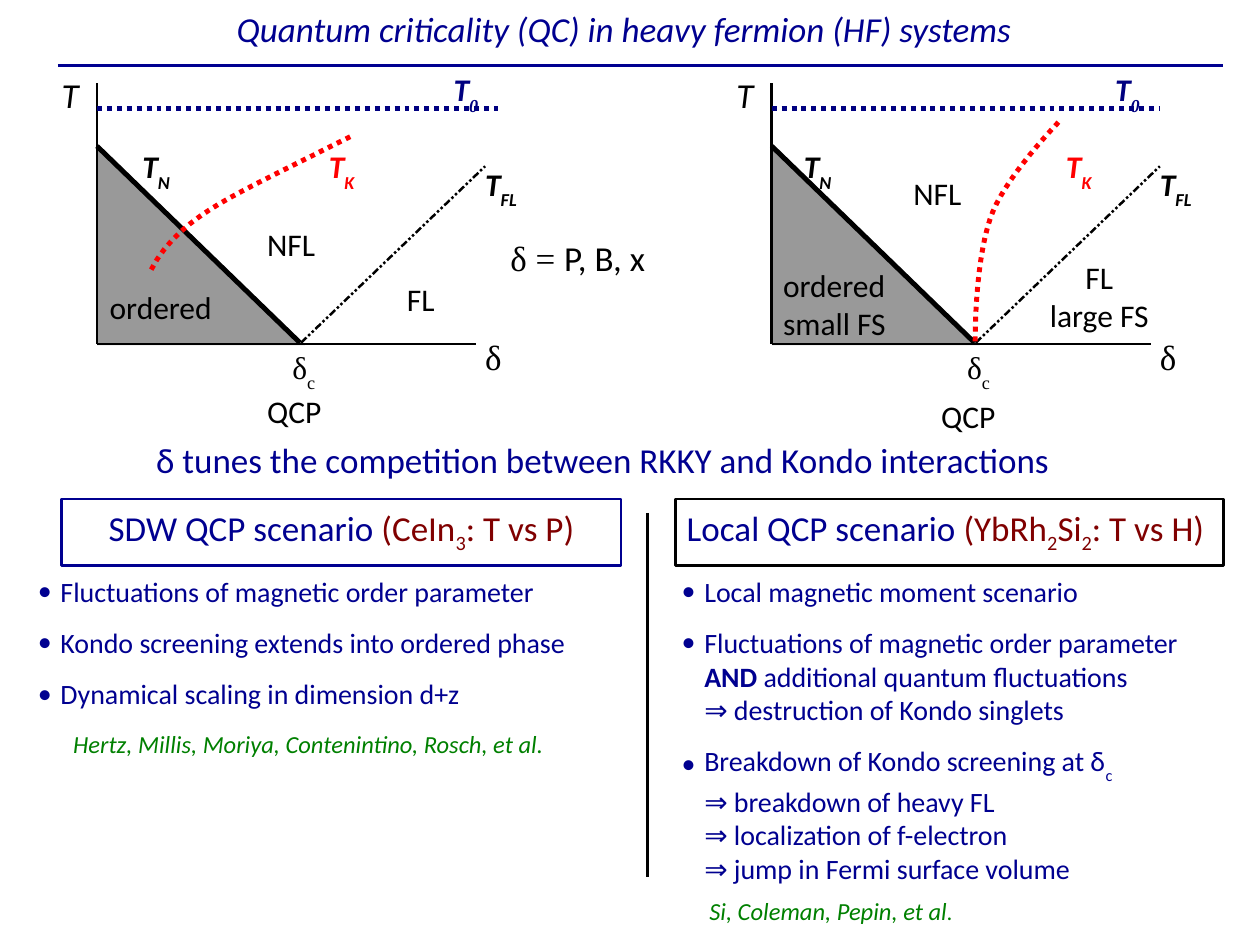
from lxml import etree
from pptx import Presentation
from pptx.dml.color import RGBColor
from pptx.enum.shapes import MSO_CONNECTOR, MSO_SHAPE
from pptx.enum.text import MSO_ANCHOR, PP_ALIGN
from pptx.oxml.ns import qn
from pptx.util import Inches, Pt

LEFT, CENTER = PP_ALIGN.LEFT, PP_ALIGN.CENTER
TOP = MSO_ANCHOR.TOP
STRAIGHT = MSO_CONNECTOR.STRAIGHT
TRIANGLE = MSO_SHAPE.RIGHT_TRIANGLE

BLACK = RGBColor(0x00, 0x00, 0x00)
WHITE = RGBColor(0xFF, 0xFF, 0xFF)
GRAY = RGBColor(0x99, 0x99, 0x99)
RED = RGBColor(0xFF, 0x00, 0x00)
NAVY = RGBColor(0x00, 0x00, 0x80)
BLUE = RGBColor(0x00, 0x00, 0x90)
MAROON = RGBColor(0x80, 0x00, 0x00)
GREEN = RGBColor(0x00, 0x80, 0x00)

SANS, SERIF = "Calibri", "Times New Roman"
WIDTH, HEIGHT = Inches(10), Inches(7.5)
COLUMN, ROW = WIDTH / 100, HEIGHT / 75
DOTS, DASH_DOTS = "sysDot", "sysDashDotDot"
SUB = {"base": -33}
FORMULA_SUB = {"base": -25, "color": MAROON}


def place(col, row):
    return round(col * COLUMN), round(row * ROW)


def style_line(shape, color, weight, dash=None):
    shape.line.color.rgb = color
    shape.line.width = Pt(weight)
    if dash:
        outline = shape._element.spPr.find(qn("a:ln"))
        etree.SubElement(outline, qn("a:prstDash"), val=dash)


def add_line(slide, start, end, color=BLACK, weight=1.42, dash=None):
    line = slide.shapes.add_connector(STRAIGHT, *place(*start), *place(*end))
    style_line(line, color, weight, dash)
    etree.SubElement(line._element.spPr, qn("a:effectLst"))


def add_run(paragraph, text, size, color, font=SANS, bold=False, italic=False, base=0):
    for index, part in enumerate(text.split("\n")):
        if index:
            paragraph.add_line_break()
        if not part:
            continue
        run = paragraph.add_run()
        run.text = part
        run.font.name, run.font.size = font, Pt(size)
        run.font.bold, run.font.italic = bold, italic
        run.font.color.rgb = color
        if base:
            run._r.get_or_add_rPr().set("baseline", str(base * 1000))


def add_text(slide, box, *paragraphs, size=18, color=BLACK, align=LEFT, wrap=False,
             bullet=None, fill=None, border=None, **font):
    holder = slide.shapes.add_textbox(*place(*box[:2]), *place(*box[2:]))
    if fill is not None:
        holder.fill.solid()
        holder.fill.fore_color.rgb = fill
    if border is not None:
        style_line(holder, border, 1.5)
    frame = holder.text_frame
    frame.word_wrap, frame.vertical_anchor = wrap, TOP
    frame.margin_left = frame.margin_right = Inches(0.09)
    frame.margin_top, frame.margin_bottom = Inches(0.06), Inches(0.04)
    for index, runs in enumerate(paragraphs):
        paragraph = frame.add_paragraph() if index else frame.paragraphs[0]
        paragraph.alignment = align
        if bullet:
            paragraph.space_after = Pt(10)
            properties = paragraph._p.get_or_add_pPr()
            properties.set("marL", str(Inches(0.18)))
            properties.set("indent", str(-Inches(0.18)))
            etree.SubElement(properties, qn("a:buFont"), typeface=SANS)
            etree.SubElement(properties, qn("a:buChar"), char=bullet)
            paragraph.font.size = Pt(size)
        for run in [runs] if isinstance(runs, str) else runs:
            text, changes = (run, {}) if isinstance(run, str) else run
            add_run(paragraph, text, **{"size": size, "color": color, **font, **changes})


def add_curve(slide, points, color, steps=12):
    path_points = [points[0]]
    for first in range(0, len(points) - 1, 3):
        a, b, c, d = points[first:first + 4]
        for step in range(1, steps + 1):
            t = step / steps
            u = 1 - t
            path_points.append(tuple(
                u**3 * p + 3 * u * u * t * q + 3 * u * t * t * r + t**3 * s
                for p, q, r, s in zip(a, b, c, d)))
    corners = [place(*point) for point in path_points]
    builder = slide.shapes.build_freeform(*corners[0])
    builder.add_line_segments(corners[1:], close=False)
    curve = builder.convert_to_shape()
    curve.shadow.inherit = False
    curve.fill.background()
    style_line(curve, color, 2.83, DOTS)


def phase_diagram(slide, box, regions, kondo_curve, kondo_label, shift=0):
    left, top, width, height = box

    def at(x, y):
        return left + x, top + y

    def label(x, y, w, *runs, h=4, **style):
        add_text(slide, (*at(x, y), w, h), list(runs), **style)

    ordered = slide.shapes.add_shape(TRIANGLE, *place(*at(0, 4.8)), *place(16.5, 16))
    ordered.shadow.inherit = False
    ordered.fill.solid()
    ordered.fill.fore_color.rgb = GRAY
    ordered.line.fill.background()

    add_line(slide, at(0, height), at(width, height))
    add_line(slide, at(0, height), at(0, 0))
    add_line(slide, at(0, 5), at(16.1, 20.6), weight=2.83)
    add_line(slide, at(16.2, 20.6), at(30.8, 6.6), dash=DASH_DOTS)
    add_line(slide, at(0, 2), at(31.8 + shift, 2), NAVY, 2.83, DOTS)
    add_curve(slide, [at(*point) for point in kondo_curve], RED)

    label(-3.7, -1.4, 3.3, "T", size=20, italic=True)
    label(29.9, 19.4, 3.1, "δ", size=20, font=SERIF)
    label(14.6, 20.4, 4.2, "δ", ("c", SUB), font=SERIF)
    strong = {"bold": True, "italic": True}
    label(2.7 + shift, 4.5, 4.3, "T", ("N", SUB), **strong)
    label(*kondo_label, 4.3, "T", ("K", SUB), color=RED, **strong)
    label(29.9, 5.9, 5.1, "T", ("FL", SUB), **strong)
    label(27.4 + shift, -1.6, 4, "T", ("0", {**SUB, "font": SERIF}),
          color=NAVY, **strong)
    for text, x, y, w, h, align in regions:
        label(x, y, w, text, h=h, align=align)


def scenario(slide, box, heading, border, points, list_box, citation, citation_box):
    add_text(slide, box, heading, size=20, color=BLUE, align=CENTER, border=border)
    add_text(slide, citation_box, citation, size=14, color=GREEN, italic=True, fill=WHITE)
    add_text(slide, list_box, *points, size=16, color=BLUE, bullet="•", wrap=True)


def header(slide, box):
    left, top, width, height = box
    add_text(slide, (7.7, top, 84.3, 4.8),
             "Quantum criticality (QC) in heavy fermion (HF) systems ",
             size=20, color=BLUE, italic=True, align=CENTER)
    add_line(slide, (left, top + height), (left + width, top + height), BLUE, 2.25)


def main():
    deck = Presentation()
    deck.slide_width, deck.slide_height = WIDTH, HEIGHT
    slide = deck.slides.add_slide(deck.slide_layouts[6])

    header(slide, (4.6, 0, 92.5, 5.2))
    phase_diagram(
        slide, (7.7, 6.6, 30.1, 20.7),
        [("ordered", 0.1, 15.7, 10.5, 3.4, LEFT), ("NFL", 12.6, 10.7, 6.3, 3.4, LEFT),
         ("FL", 23.7, 15, 4.6, 3.4, LEFT), ("QCP", 12.6, 23.9, 6.9, 3.4, LEFT)],
        [(4.3, 14.8), (6.1, 11.3), (9.7, 9.5), (13.2, 7.7),
         (16.8, 5.9), (16.8, 5.9), (20.4, 4.1)], (17.5, 4.5))
    phase_diagram(
        slide, (61.25, 6.6, 30.1, 20.7),
        [("ordered\nsmall FS", 0, 13.9, 10.6, 6, LEFT),
         ("NFL", 10.35, 6.6, 6.3, 3.4, LEFT),
         ("FL\nlarge FS", 20.85, 13.3, 10.3, 6, CENTER),
         ("QCP", 12.55, 24.3, 6.9, 3.4, LEFT)],
        [(16.15, 20.5), (16.15, 17), (16.55, 12.6), (17.55, 10.2),
         (18.55, 7.8), (21.15, 4.8), (22.85, 3)], (22.45, 4.5), shift=-1.05)
    add_text(slide, (39.6, 18.2, 14.1, 4), [("δ = ", {"font": SERIF}), "P, B, x"], size=20)
    add_text(slide, (11.5, 34.2, 77, 4),
             "δ tunes the competition between RKKY and Kondo interactions",
             size=20, color=BLUE)

    add_line(slide, (51.4, 40.7), (51.4, 69.6), weight=1.5)
    maroon = {"color": MAROON}
    scenario(
        slide, (4.9, 39.6, 44.4, 5.3),
        ["SDW QCP scenario ", ("(CeIn", maroon), ("3", FORMULA_SUB), (": T vs P)", maroon)],
        BLUE,
        ["Fluctuations of magnetic order parameter",
         "Kondo screening extends into ordered phase",
         "Dynamical scaling in dimension d+z"],
        (2.1, 45, 47.1, 15.6),
        "Hertz, Millis, Moriya, Contenintino, Rosch, et al.", (4.9, 57.3, 39.9, 3.3))
    scenario(
        slide, (53.6, 39.6, 43.5, 5.3),
        ["Local QCP scenario ", ("(YbRh", maroon), ("2", FORMULA_SUB), ("Si", maroon),
         ("2", FORMULA_SUB), (": T vs H) ", maroon)],
        BLACK,
        ["Local magnetic moment scenario",
         ["Fluctuations of magnetic order parameter\n", ("AND ", {"bold": True}),
          "additional quantum fluctuations\n⇒ destruction of Kondo singlets"],
         ["Breakdown of Kondo screening at δ", ("c", SUB),
          "\n⇒ breakdown of heavy FL\n⇒ localization of f-electron"
          "\n⇒ jump in Fermi surface volume"]],
        (53.2, 45, 44.6, 27.4),
        ["Si, Coleman, Pepin, et al", (".", {"size": 13})], (55.4, 70.5, 21.7, 3.3))

    deck.save("out.pptx")


if __name__ == "__main__":
    main()
